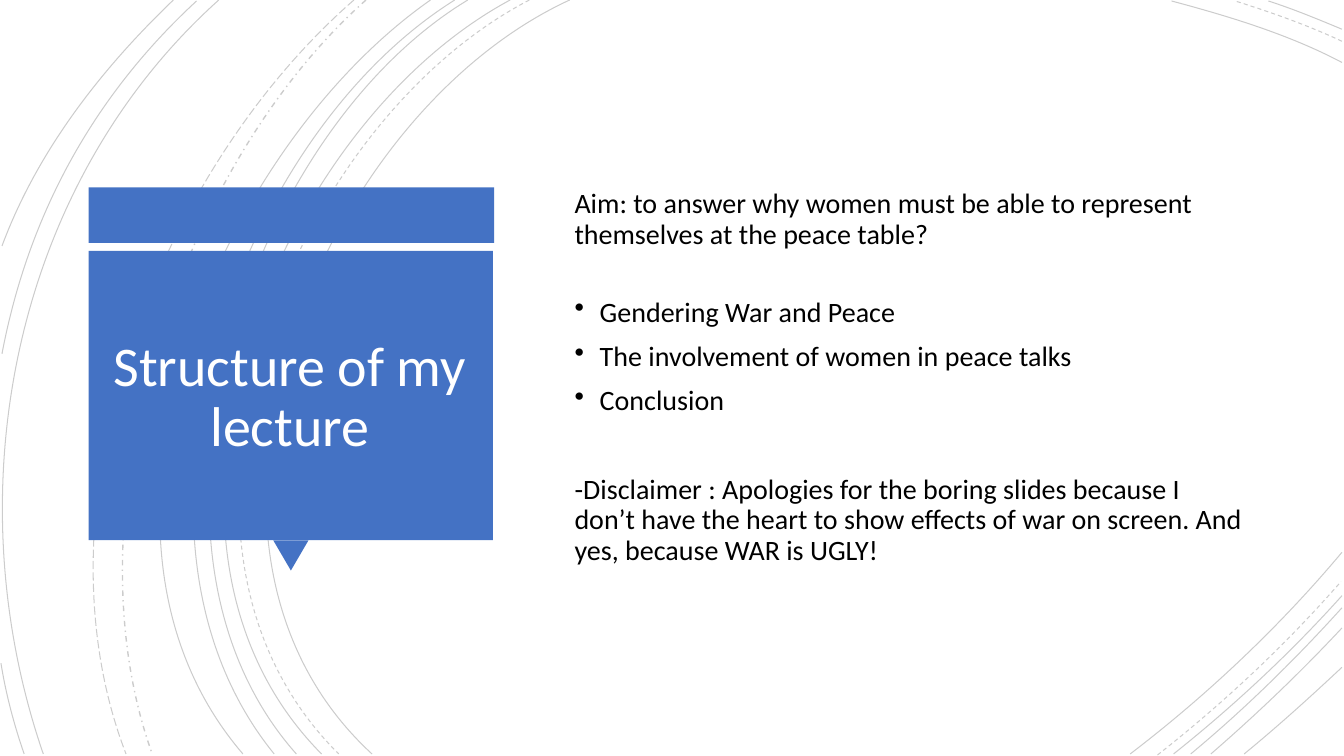
"""Build the lecture structure slide with its curved line background."""
import pptx
import pptx.dml.color
import pptx.enum.dml
import pptx.enum.shapes
import pptx.enum.text
import pptx.oxml
import pptx.oxml.ns
import pptx.util
from pptx.util import Inches

BLUE = pptx.dml.color.RGBColor(0x44, 0x72, 0xC4)
WHITE = pptx.dml.color.RGBColor(0xFF, 0xFF, 0xFF)
BLACK = pptx.dml.color.RGBColor(0x00, 0x00, 0x00)
DASH = pptx.enum.dml.MSO_LINE
PRESET = pptx.enum.shapes.MSO_SHAPE
ALIGN = pptx.enum.text.PP_ALIGN
qn = pptx.oxml.ns.qn

ARCS = [
    ((5.65, 0), (3.15, 1.15), (1.43, 5.4), (3.69, 7.48), DASH.SOLID),
    ((13.31, 0.62), (12.78, 0.34), (12.18, 0.16), (11.62, 0.01), DASH.SOLID),
    ((11.21, 7.48), (11.97, 6.9), (12.69, 6.22), (13.31, 5.48), DASH.SOLID),
    ((5.25, 0), (2.85, 1.25), (1.23, 5.37), (3.36, 7.48), DASH.DASH),
    ((13.31, 0.41), (12.97, 0.25), (12.6, 0.12), (12.25, 0.01), DASH.DASH),
    ((11.48, 7.49), (12.13, 6.98), (12.75, 6.4), (13.3, 5.77), DASH.DASH),
    ((5.06, 0), (2.7, 1.27), (1.1, 5.37), (3.19, 7.48), DASH.SOLID),
    ((13.31, 0.29), (13.07, 0.19), (12.83, 0.09), (12.58, 0.01), DASH.SOLID),
    ((11.64, 7.48), (12.23, 7.01), (12.8, 6.48), (13.31, 5.91), DASH.SOLID),
    ((4.64, 0), (2.44, 1.33), (1.1, 5.41), (2.94, 7.48), DASH.SOLID),
    ((11.81, 7.48), (12.34, 7.04), (12.84, 6.55), (13.31, 6.03), DASH.SOLID),
    ((4.51, 0), (2.31, 1.38), (0.97, 5.33), (2.72, 7.48), DASH.SOLID),
    ((12.01, 7.48), (12.46, 7.09), (12.9, 6.67), (13.31, 6.23), DASH.SOLID),
    ((4.27, 0), (2.17, 1.47), (0.53, 5.29), (2.41, 7.48), DASH.SOLID),
    ((12.34, 7.48), (12.67, 7.21), (12.99, 6.92), (13.31, 6.62), DASH.SOLID),
    ((3.63, 0), (1.76, 1.66), (0.65, 5.09), (1.51, 7.48), DASH.DASH_DOT),
    ((3.51, 0), (1.57, 1.69), (0.29, 4.99), (1.25, 7.48), DASH.LONG_DASH),
    ((2.17, 0), (0.11, 1.85), (-0.46, 4.9), (0.43, 7.48), DASH.SOLID),
    ((1.95, 0.01), (0.92, 0.96), (0.28, 2.14), (0.02, 3.51), DASH.SOLID),
    ((0.01, 6.58), (0.06, 6.89), (0.14, 7.19), (0.24, 7.48), DASH.SOLID),
    ((1.72, 0), (1, 0.69), (0.37, 1.5), (0.02, 2.44), DASH.SOLID),
]
CALLOUT = [
    (PRESET.RECTANGLE, 0.88, 1.86, 4.02, 0.55, 0),
    (PRESET.ISOSCELES_TRIANGLE, 2.71, 5.36, 0.35, 0.3, 180),
    (PRESET.RECTANGLE, 0.88, 2.49, 4.01, 2.87, 0),
]
OUTLINE = [
    ("Aim: to answer why women must be able to represent themselves at the peace table?", False, 10, 24),
    ("Gendering War and Peace", True, 10, 0),
    ("The involvement of women in peace talks", True, 10, 0),
    ("Conclusion", True, 10, 0),
    ("-Disclaimer : Apologies for the boring slides because I don’t have the heart to show "
     "effects of war on screen. And yes, because WAR is UGLY!", False, 42, 0),
]


def add_text_frame(left, top, width, height):
    frame = slide.shapes.add_textbox(Inches(left), Inches(top), Inches(width), Inches(height)).text_frame
    frame.word_wrap = True
    frame.vertical_anchor = pptx.enum.text.MSO_ANCHOR.MIDDLE
    return frame


def write(paragraph, wording, size, color, align):
    paragraph.alignment = align
    paragraph.line_spacing = 0.9
    run = paragraph.add_run()
    run.text = wording
    run.font.name = "Calibri"
    run.font.size = pptx.util.Pt(size)
    run.font.color.rgb = color


deck = pptx.Presentation()
deck.slide_width, deck.slide_height = Inches(13.33), Inches(7.5)
slide = deck.slides.add_slide(deck.slide_layouts[6])

for *points, dash in ARCS:
    start, *bends = [(Inches(x), Inches(y)) for x, y in points]
    builder = slide.shapes.build_freeform(*start)
    builder.add_line_segments(bends, close=False)
    arc = builder.convert_to_shape()
    arc.shadow.inherit = False
    arc.fill.background()
    arc.line.width = pptx.util.Pt(1 if dash == DASH.DASH_DOT else 0.75)
    arc.line.color.rgb = BLACK
    arc.line.dash_style = dash
    stroke = arc.line._get_or_add_ln().find(".//" + qn("a:srgbClr"))
    pptx.oxml.ns  # noqa
    stroke.append(pptx.oxml.parse_xml(f'<a:alpha {pptx.oxml.ns.nsdecls("a")} val="20000"/>'))
    segments = list(arc._element.iter(qn("a:lnTo")))
    curve = pptx.oxml.parse_xml(f'<a:cubicBezTo {pptx.oxml.ns.nsdecls("a")}/>')
    segments[0].addprevious(curve)
    for segment in segments:
        curve.append(segment[0])
        segment.getparent().remove(segment)

for preset, left, top, width, height, rotation in CALLOUT:
    panel = slide.shapes.add_shape(preset, Inches(left), Inches(top), Inches(width), Inches(height))
    panel.rotation = rotation
    panel.shadow.inherit = False
    panel.fill.solid()
    panel.fill.fore_color.rgb = BLUE
    panel.line.fill.background()

title = add_text_frame(0.99, 2.64, 3.77, 2.62)
write(title.paragraphs[0], "Structure of my lecture", 40, WHITE, ALIGN.CENTER)

outline = add_text_frame(5.6, 0.88, 6.87, 5.74)
for index, (wording, bulleted, before, after) in enumerate(OUTLINE):
    paragraph = outline.add_paragraph() if index else outline.paragraphs[0]
    write(paragraph, wording, 20, BLACK, ALIGN.LEFT)
    paragraph.space_before = pptx.util.Pt(before)
    paragraph.space_after = pptx.util.Pt(after)
    if bulleted:
        properties = paragraph._p.get_or_add_pPr()
        properties.set("marL", str(Inches(0.25)))
        properties.set("indent", str(-Inches(0.25)))
        properties.append(pptx.oxml.parse_xml(f'<a:buChar {pptx.oxml.ns.nsdecls("a")} char="•"/>'))

deck.save("out.pptx")
